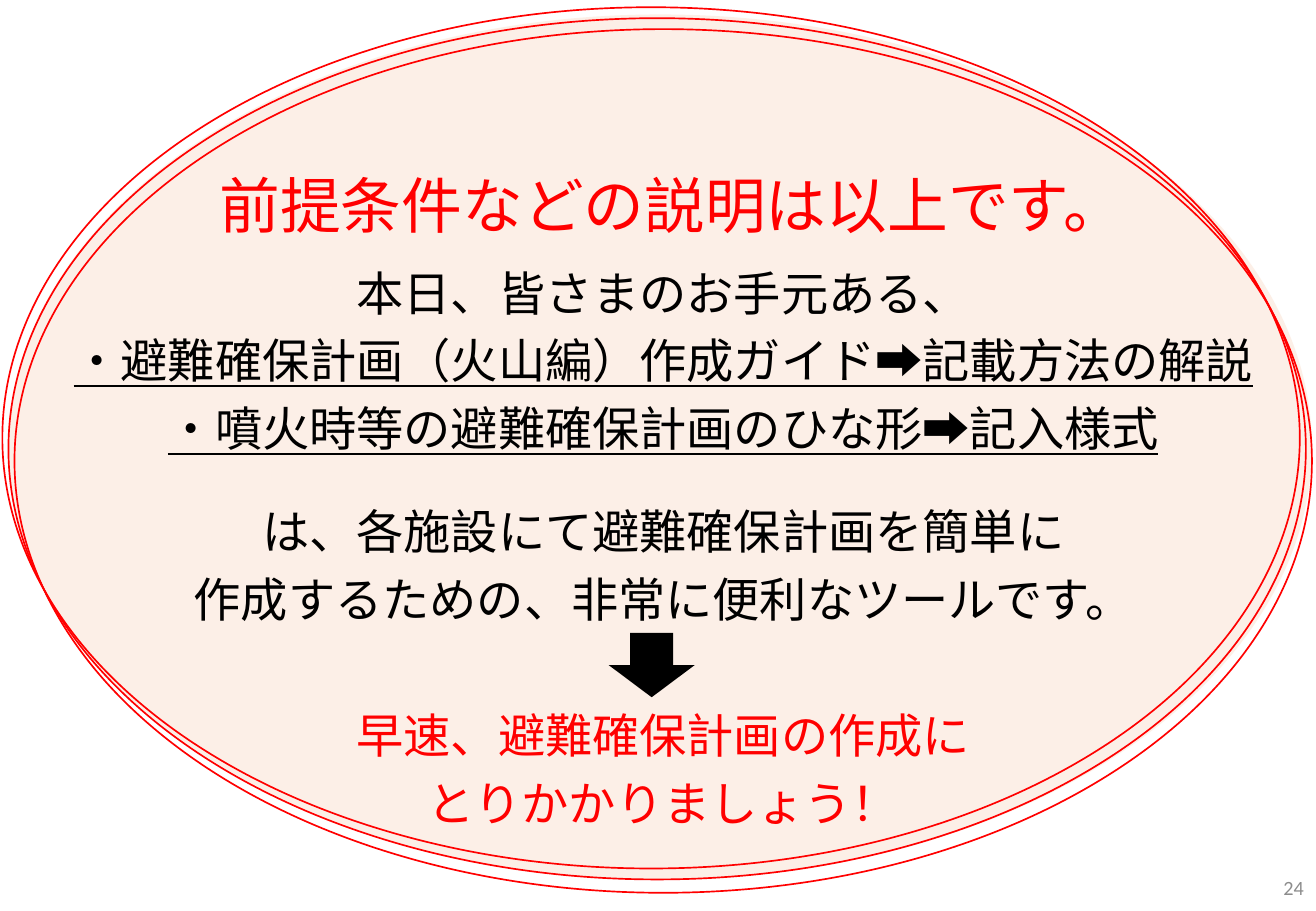
"""Build the closing slide that introduces the evacuation plan tools."""
from lxml.etree import SubElement
from pptx import Presentation
from pptx.dml.color import RGBColor
from pptx.enum.shapes import MSO_SHAPE
from pptx.enum.text import MSO_ANCHOR, PP_ALIGN
from pptx.oxml.ns import qn
from pptx.util import Pt

RED, BLACK, GRAY, PEACH = "FF0000", "000000", "8C8C8C", "F8CBAD"
LATIN, JAPANESE = "Calibri", "Noto Sans CJK JP"
LINE_PITCH = 40.3

BACKGROUND_OVAL = (5, 8.6, 772.6, 512.6)
OUTLINE_OVALS = [
    (5, 10.8, 769, 510.5),
    (8.6, 17.3, 769, 511.9),
    (1.4, 4.3, 769, 510.5),
]
DOWN_ARROW = (360.7, 375.1, 51.1, 38.2)

HEADING = [("前提条件などの説明は以上です。", {"size": 36, "color": RED, "pitch": 44})]
UNDERLINED = {"underline": True}
BODY = [
    ("本日、皆さまのお手元ある、", {}),
    ("・避難確保計画（火山編）作成ガイド➡記載方法の解説", UNDERLINED),
    ("・噴火時等の避難確保計画のひな形➡記入様式", UNDERLINED),
    ("は、各施設にて避難確保計画を簡単に", {"gap": 20.7}),
    ("作成するための、非常に便利なツールです。", {}),
    ("早速、避難確保計画の作成に", {"color": RED, "gap": LINE_PITCH}),
    ("とりかかりましょう！", {"color": RED}),
]
PAGE_NUMBER = [("24", {"size": 12, "color": GRAY, "pitch": 15, "align": PP_ALIGN.RIGHT})]
TEXT_BOXES = [
    ((117.4, 98.5, 561.6, 51), HEADING, MSO_ANCHOR.TOP),
    ((41, 149.7, 704.2, 373), BODY, MSO_ANCHOR.TOP),
    ((604.8, 511.2, 168, 28.8), PAGE_NUMBER, MSO_ANCHOR.MIDDLE),
]


def color(value):
    return RGBColor.from_string(value)


def add_figure(slide, preset, box, fill=None, line=None, opacity=None):
    shape = slide.shapes.add_shape(preset, *map(Pt, box))
    shape.shadow.inherit = False
    if fill:
        shape.fill.solid()
        shape.fill.fore_color.rgb = color(fill)
    else:
        shape.fill.background()
    if opacity:
        fill_color = shape.fill._xPr.find(f"{qn('a:solidFill')}/{qn('a:srgbClr')}")
        SubElement(fill_color, qn("a:alpha"), val=str(opacity * 1000))
    if line:
        shape.line.color.rgb = color(line)
        shape.line.width = Pt(1)
    else:
        shape.line.fill.background()


def add_text(slide, box, lines, anchor):
    frame = slide.shapes.add_textbox(*map(Pt, box)).text_frame
    frame_format = {"word_wrap": True, "vertical_anchor": anchor, "margin_left": 0,
                    "margin_right": 0, "margin_top": 0, "margin_bottom": 0}
    for name, value in frame_format.items():
        setattr(frame, name, value)
    for index, (text, style) in enumerate(lines):
        paragraph = frame.add_paragraph() if index else frame.paragraphs[0]
        paragraph_format = {"alignment": style.get("align", PP_ALIGN.CENTER),
                            "line_spacing": Pt(style.get("pitch", LINE_PITCH)),
                            "space_before": Pt(style.get("gap", 0))}
        for name, value in paragraph_format.items():
            setattr(paragraph, name, value)
        run = paragraph.add_run()
        run.text = text
        font_format = {"name": LATIN, "size": Pt(style.get("size", 28)),
                       "underline": style.get("underline", False)}
        for name, value in font_format.items():
            setattr(run.font, name, value)
        run.font.color.rgb = color(style.get("color", BLACK))
        SubElement(run.font._element, qn("a:ea"), typeface=JAPANESE)


def main():
    presentation = Presentation()
    presentation.slide_width, presentation.slide_height = Pt(780), Pt(540)
    slide = presentation.slides.add_slide(presentation.slide_layouts[6])
    add_figure(slide, MSO_SHAPE.OVAL, BACKGROUND_OVAL, fill=PEACH, opacity=29)
    for box in OUTLINE_OVALS:
        add_figure(slide, MSO_SHAPE.OVAL, box, line=RED)
    add_figure(slide, MSO_SHAPE.DOWN_ARROW, DOWN_ARROW, fill=BLACK)
    for box, lines, anchor in TEXT_BOXES:
        add_text(slide, box, lines, anchor)
    presentation.save("out.pptx")


if __name__ == "__main__":
    main()
